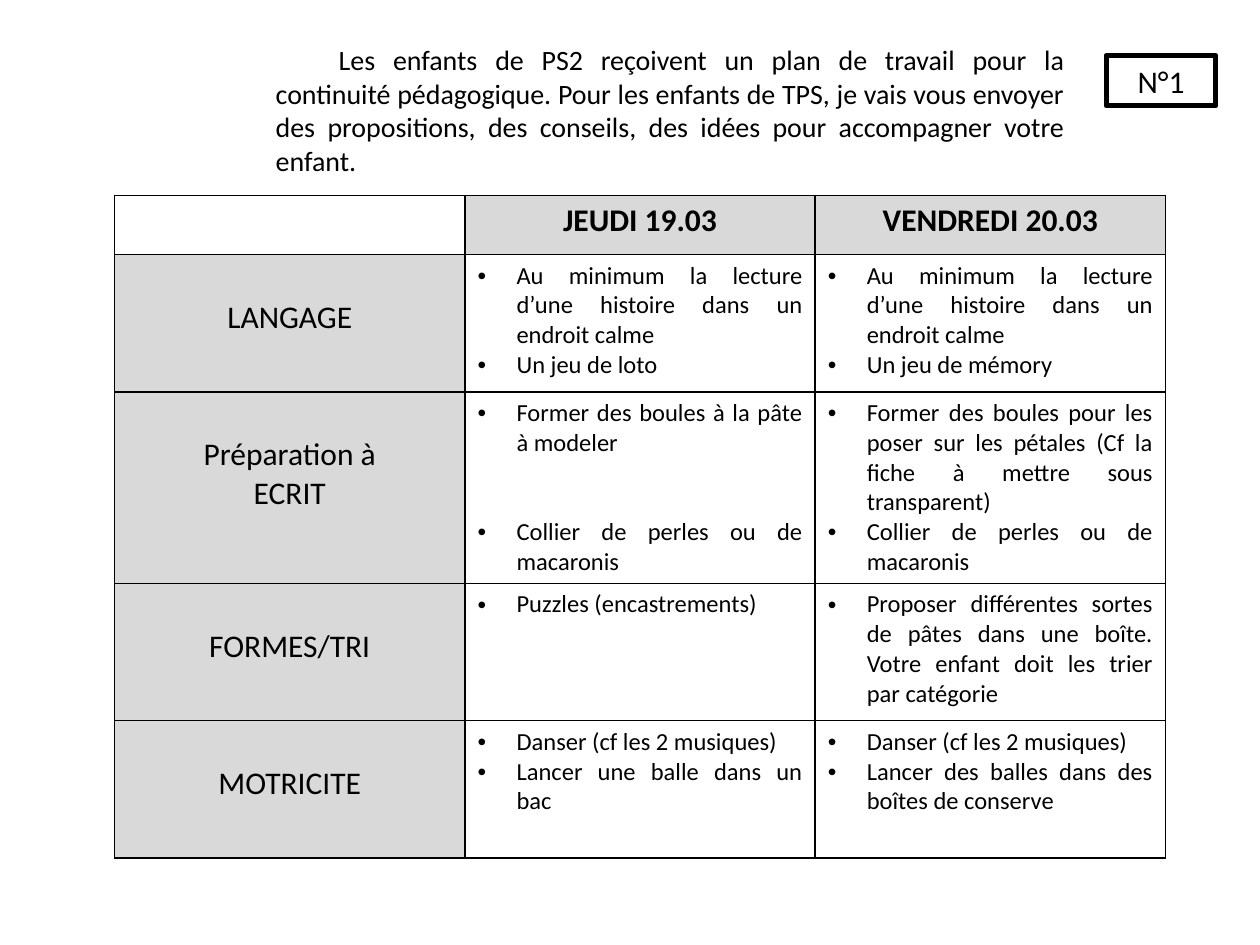
from lxml import etree
from pptx import Presentation
from pptx.dml.color import RGBColor
from pptx.enum.shapes import MSO_SHAPE
from pptx.enum.text import MSO_ANCHOR, MSO_AUTO_SIZE, PP_ALIGN
from pptx.oxml.ns import qn
from pptx.util import Inches, Pt

CENTER, JUSTIFY = PP_ALIGN.CENTER, PP_ALIGN.JUSTIFY
RECTANGLE = MSO_SHAPE.RECTANGLE
TOP, MIDDLE = MSO_ANCHOR.TOP, MSO_ANCHOR.MIDDLE
FIT_TEXT = MSO_AUTO_SIZE.SHAPE_TO_FIT_TEXT
BLACK = RGBColor(0x00, 0x00, 0x00)
GREY = RGBColor(0xD9, 0xD9, 0xD9)
WHITE = RGBColor(0xFF, 0xFF, 0xFF)
FONT = "Calibri"

COL_WIDTH = 2.78
HEADER_HEIGHT, ROW_HEIGHT, TALL_ROW_HEIGHT = 0.47, 1.09, 1.52
LABEL_TOP = 0.35
BULLET_INDENT = 0.31
ALIGNING_GAP = 34

INTRO = ("\tLes enfants de PS2 reçoivent un plan de travail pour la continuité "
         "pédagogique. Pour les enfants de TPS, je vais vous envoyer des "
         "propositions, des conseils, des idées pour accompagner votre enfant.")
DAYS = ["JEUDI 19.03", "VENDREDI 20.03"]
STORY = "Au minimum la lecture d’une histoire dans un endroit calme"
BEADS = "Collier de perles ou de macaronis"
DANCE = "Danser (cf les 2 musiques)"
# Each row: label lines, height, Thursday activities, Friday activities
ACTIVITIES = [
    (["LANGAGE"], ROW_HEIGHT,
     [STORY, "Un jeu de loto"], [STORY, "Un jeu de mémory"]),
    (["Préparation à", "ECRIT"], TALL_ROW_HEIGHT,
     ["Former des boules à la pâte à modeler", BEADS],
     ["Former des boules pour les poser sur les pétales "
      "(Cf la fiche à mettre sous transparent)", BEADS]),
    (["FORMES/TRI"], ROW_HEIGHT,
     ["Puzzles (encastrements)"],
     ["Proposer différentes sortes de pâtes dans une boîte. "
      "Votre enfant doit les trier par catégorie"]),
    (["MOTRICITE"], ROW_HEIGHT,
     [DANCE, "Lancer une balle dans un bac"],
     [DANCE, "Lancer des balles dans des boîtes de conserve"]),
]


def write(tf, lines, size, align, bold=False, bullet=False):
    for i, line in enumerate(lines):
        p = tf.add_paragraph() if i else tf.paragraphs[0]
        p.alignment = align
        if bullet:
            add_bullet(p)
        r = p.add_run()
        r.text = line
        r.font.name, r.font.size, r.font.bold = FONT, Pt(size), bold
        r.font.color.rgb = BLACK


def add_bullet(p):
    pPr = p._p.get_or_add_pPr()
    pPr.set("marL", str(Inches(BULLET_INDENT)))
    pPr.set("indent", str(-Inches(BULLET_INDENT)))
    etree.SubElement(pPr, qn("a:buFont")).set("typeface", "Arial")
    etree.SubElement(pPr, qn("a:buChar")).set("char", "•")


def style_cell(cell, color):
    """Draw the four borders, then the fill, which must follow them."""
    tcPr = cell._tc.get_or_add_tcPr()
    for side in ("lnL", "lnR", "lnT", "lnB"):
        ln = etree.SubElement(tcPr, qn(f"a:{side}"), w=str(Pt(1)))
        fill = etree.SubElement(ln, qn("a:solidFill"))
        etree.SubElement(fill, qn("a:srgbClr"), val=str(BLACK))
    cell.fill.solid()
    cell.fill.fore_color.rgb = color
    cell.vertical_anchor = TOP


def add_intro(s):
    sp = s.shapes.add_textbox(Inches(2.09), Inches(0.29), Inches(6.46), Inches(1.18))
    tf = sp.text_frame
    tf.word_wrap = True
    tf.auto_size = FIT_TEXT
    write(tf, [INTRO], 16, JUSTIFY)


def add_number(s):
    sp = s.shapes.add_shape(RECTANGLE, Inches(8.78), Inches(0.44),
                            Inches(0.87), Inches(0.4))
    sp.shadow.inherit = False
    sp.fill.background()
    sp.line.color.rgb = BLACK
    sp.line.width = Pt(3)
    tf = sp.text_frame
    tf.word_wrap = True
    tf.auto_size = FIT_TEXT
    tf.vertical_anchor = MIDDLE
    write(tf, ["N°1"], 18, CENTER)


def add_plan(s):
    heights = [HEADER_HEIGHT] + [row[1] for row in ACTIVITIES]
    columns = 1 + len(DAYS)
    table = s.shapes.add_table(len(heights), columns, Inches(0.91), Inches(1.55),
                               Inches(COL_WIDTH * columns),
                               Inches(sum(heights))).table
    table.first_row = table.horz_banding = False
    for column in table.columns:
        column.width = Inches(COL_WIDTH)
    for row, height in zip(table.rows, heights):
        row.height = Inches(height)

    style_cell(table.cell(0, 0), WHITE)
    for c, day in enumerate(DAYS, 1):
        cell = table.cell(0, c)
        style_cell(cell, GREY)
        write(cell.text_frame, [day], 18, CENTER, bold=True)

    for r, (label, _, *days) in enumerate(ACTIVITIES, 1):
        cell = table.cell(r, 0)
        style_cell(cell, GREY)
        cell.margin_top = Inches(LABEL_TOP)
        write(cell.text_frame, label, 18, CENTER)
        for c, items in enumerate(days, 1):
            cell = table.cell(r, c)
            style_cell(cell, WHITE)
            write(cell.text_frame, items, 14, JUSTIFY, bullet=True)

    # Thursday's beads line up with Friday's
    table.cell(2, 1).text_frame.paragraphs[1].space_before = Pt(ALIGNING_GAP)


def main():
    prs = Presentation()
    prs.slide_width, prs.slide_height = Inches(10), Inches(7.5)
    s = prs.slides.add_slide(prs.slide_layouts[6])
    add_plan(s)
    add_intro(s)
    add_number(s)
    prs.save("out.pptx")


if __name__ == "__main__":
    main()
